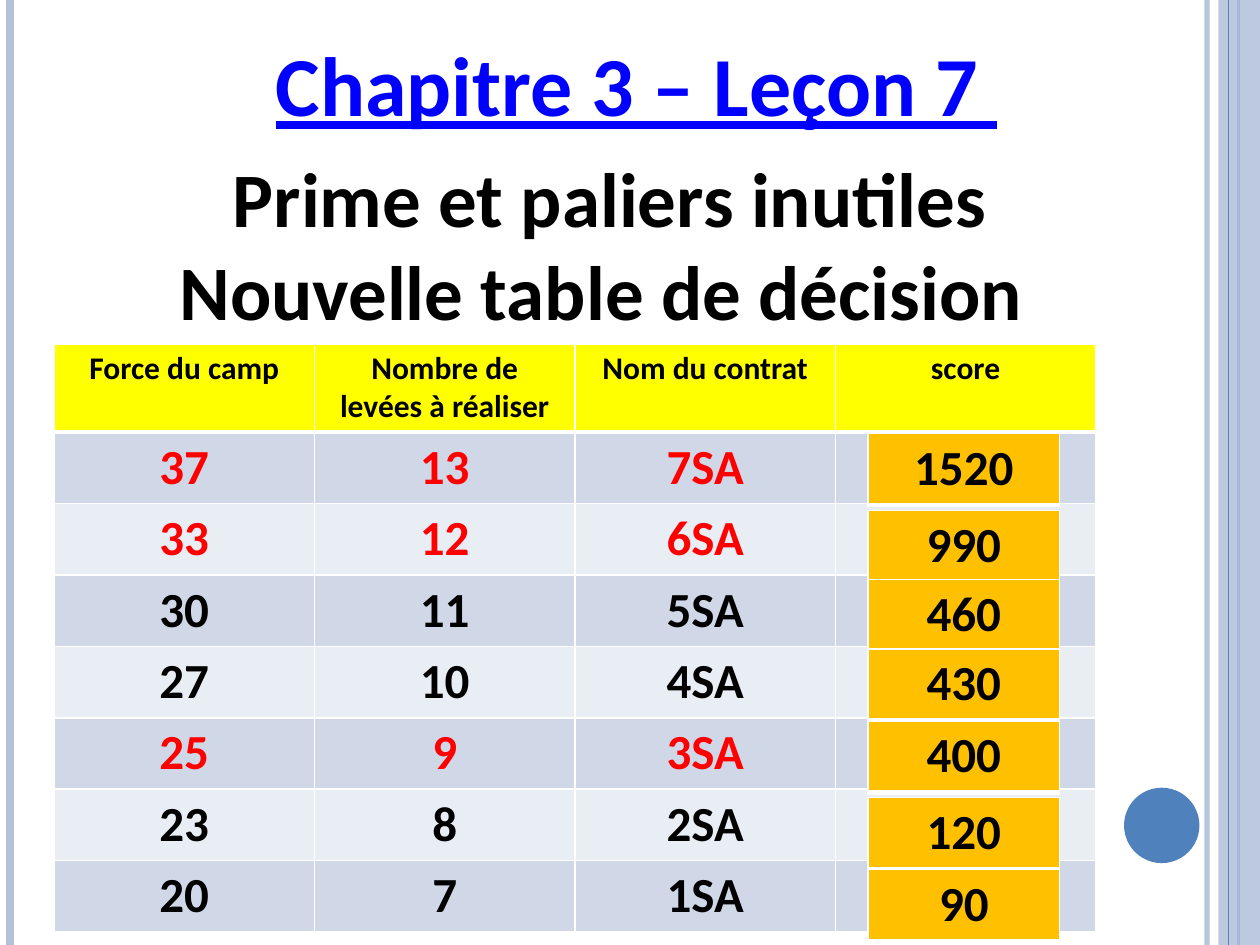
import dataclasses

import lxml.etree
import pptx
import pptx.dml.color
import pptx.enum.shapes
import pptx.enum.text
import pptx.oxml.ns
import pptx.util
from pptx.util import Cm


@dataclasses.dataclass(frozen=True)
class Theme:
    font: str = "Calibri"
    black: str = "000000"
    red: str = "FF0000"
    title: str = "0000FF"
    header: str = "FFFF00"
    score: str = "FFC000"
    bands: tuple = ("D0D8E8", "E9EDF4")
    border: str = "FFFFFF"
    pale: str = "B3C1DB"
    accent: str = "4F81BD"
    title_size: int = 48
    subtitle_size: int = 44
    header_size: int = 18
    body_size: int = 28


theme = Theme()
qn = pptx.oxml.ns.qn
rgb = pptx.dml.color.RGBColor.from_string
CENTER = pptx.enum.text.PP_ALIGN.CENTER


def write_text(frame, text, size, color=theme.black, align=CENTER, underline=False):
    """Write one bold paragraph per line of text."""
    frame.word_wrap = True
    for index, line in enumerate(text.split("\n")):
        paragraph = frame.add_paragraph() if index else frame.paragraphs[0]
        paragraph.alignment = align
        run = paragraph.add_run()
        run.text = line
        run.font.name = theme.font
        run.font.size = pptx.util.Pt(size)
        run.font.bold = True
        run.font.underline = underline
        run.font.color.rgb = rgb(color)


def style_cell(cell, fill, bottom=1):
    """Set margins, white borders and fill; bottom is a width in points."""
    cell.margin_top = cell.margin_bottom = Cm(0.11)
    properties = cell._tc.get_or_add_tcPr()
    for side, width in (("L", 1), ("R", 1), ("T", 1), ("B", bottom)):
        border = lxml.etree.SubElement(
            properties, qn(f"a:ln{side}"), w=str(pptx.util.Pt(width)))
        solid = lxml.etree.SubElement(border, qn("a:solidFill"))
        lxml.etree.SubElement(solid, qn("a:srgbClr"), val=theme.border)
    cell.fill.solid()
    cell.fill.fore_color.rgb = rgb(fill)


presentation = pptx.Presentation()
presentation.slide_width = Cm(25.4)
presentation.slide_height = Cm(19.05)
slide = presentation.slides.add_slide(presentation.slide_layouts[6])
shapes = slide.shapes

# Side decoration: (x, colour, width in points, opacity in percent)
side_lines = [
    (24.33, theme.pale, 3, 93),
    (0.2, theme.pale, 4.5, 100),
    (24.97, theme.accent, 1.5, 100),
    (24.77, theme.accent, 0.75, 100),
]
translucent = []
for index, (x, color, width, opacity) in enumerate(side_lines):
    if index == 3:  # the band lies beneath the last line
        band = shapes.add_shape(
            pptx.enum.shapes.MSO_SHAPE.RECTANGLE, Cm(24.56), 0, Cm(0.84), Cm(19.05))
        band.shadow.inherit = False
        band.fill.solid()
        band.fill.fore_color.rgb = rgb(theme.pale)
        band.line.fill.background()
        translucent.append((band, 87))
    line = shapes.add_connector(
        pptx.enum.shapes.MSO_CONNECTOR.STRAIGHT, Cm(x), 0, Cm(x), Cm(19.05))
    line.line.color.rgb = rgb(color)
    line.line.width = pptx.util.Pt(width)
    lxml.etree.SubElement(line.element.spPr, qn("a:effectLst"))
    if opacity < 100:
        translucent.append((line, opacity))

for shape, opacity in translucent:
    color_element = next(shape.element.spPr.iter(qn("a:srgbClr")))
    lxml.etree.SubElement(color_element, qn("a:alpha"), val=str(opacity * 1000))

circle = shapes.add_shape(
    pptx.enum.shapes.MSO_SHAPE.OVAL, Cm(22.66), Cm(15.88), Cm(1.52), Cm(1.52))
circle.shadow.inherit = False
circle.fill.solid()
circle.fill.fore_color.rgb = rgb(theme.accent)
circle.line.fill.background()

# Headings
title = shapes.add_textbox(Cm(5.31), Cm(0.53), Cm(15.8), Cm(2.31))
write_text(title.text_frame, "Chapitre 3 – Leçon 7 ", theme.title_size,
           color=theme.title, align=pptx.enum.text.PP_ALIGN.LEFT, underline=True)
subtitle = shapes.add_textbox(Cm(2.9), Cm(2.92), Cm(18.8), Cm(4.01))
write_text(subtitle.text_frame, "Prime et paliers inutiles\nNouvelle table de décision ",
           theme.subtitle_size)

# Decision table
headers = ["Force du camp", "Nombre de levées à réaliser", "Nom du contrat", "score"]
contracts = [
    ("37", "13", "7SA"),
    ("33", "12", "6SA"),
    ("30", "11", "5SA"),
    ("27", "10", "4SA"),
    ("25", "9", "3SA"),
    ("23", "8", "2SA"),
    ("20", "7", "1SA"),
]
bonus_contracts = {"7SA", "6SA", "3SA"}
row_height = Cm(1.44)
header_height = Cm(1.78)
table = shapes.add_table(
    len(contracts) + 1, len(headers), Cm(1.09), Cm(6.93), Cm(21),
    header_height + row_height * len(contracts)).table
table.first_row = table.horz_banding = False
for row in table.rows:
    row.height = row_height
table.rows[0].height = header_height

for column, header in enumerate(headers):
    table.columns[column].width = Cm(5.25)
    style_cell(table.cell(0, column), theme.header, bottom=3)
    write_text(table.cell(0, column).text_frame, header, theme.header_size)

for row, contract in enumerate(contracts, start=1):
    color = theme.red if contract[-1] in bonus_contracts else theme.black
    for column in range(len(headers)):
        cell = table.cell(row, column)
        style_cell(cell, theme.bands[(row - 1) % 2])
        if column < len(contract):
            write_text(cell.text_frame, contract[column], theme.body_size, color=color)

# Score cards laid over the last column
scores = [("1520", 8.74), ("990", 10.29), ("460", 11.68), ("430", 13.08),
          ("400", 14.53), ("120", 16.08), ("90", 17.53)]
for score, top in scores:
    card = shapes.add_table(1, 1, Cm(17.5), Cm(top), Cm(3.86), row_height).table
    card.first_row = card.horz_banding = False
    style_cell(card.cell(0, 0), theme.score, bottom=3)
    write_text(card.cell(0, 0).text_frame, score, theme.body_size)

presentation.save("out.pptx")
